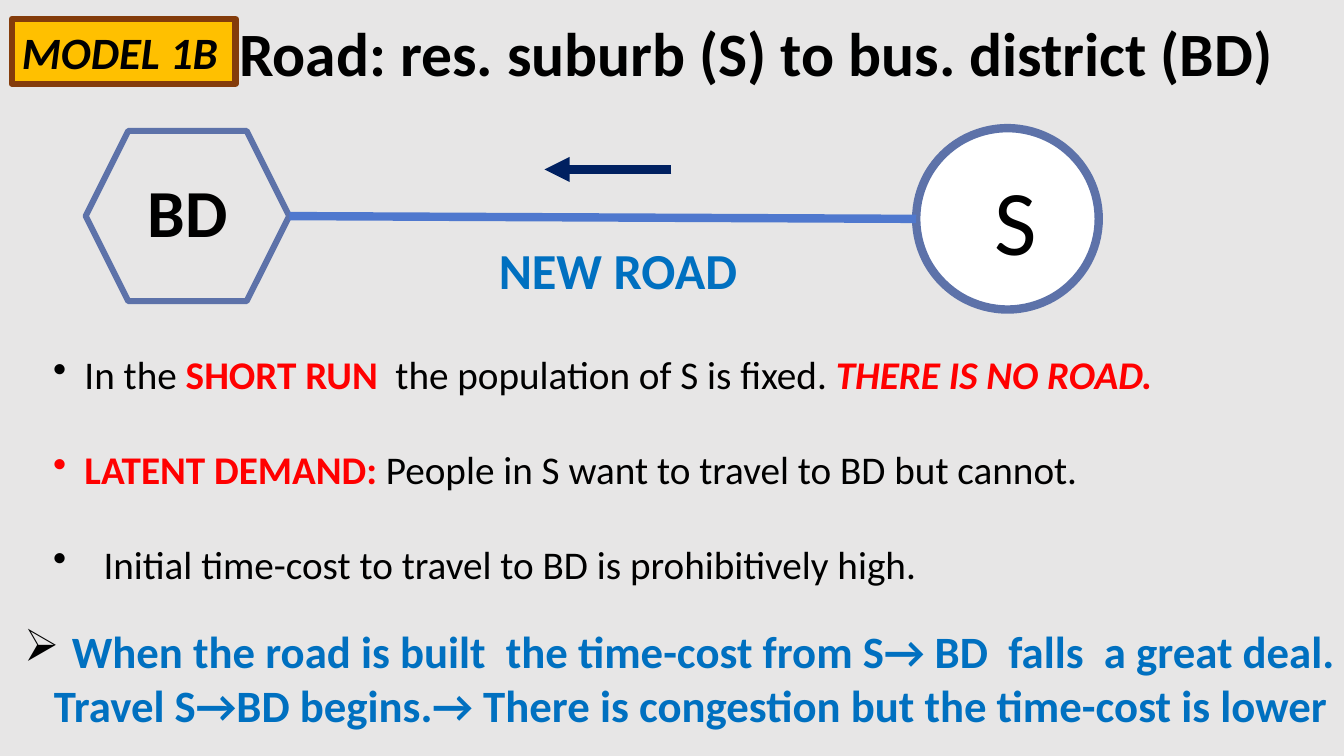
import pptx
import pptx.dml.color
import pptx.enum.shapes
import pptx.enum.text
import pptx.oxml.xmlchemy
import pptx.util

Cm = pptx.util.Cm
Pt = pptx.util.Pt
SHAPES = pptx.enum.shapes.MSO_SHAPE
ALIGN = pptx.enum.text.PP_ALIGN
ANCHOR = pptx.enum.text.MSO_ANCHOR

BLACK, RED, BLUE = "000000", "FF0000", "0070C0"
OUTLINE, ROAD, NAVY = "5D72A9", "4F78CE", "002060"

TITLE = "Road: res. suburb (S) to bus. district (BD)"
MODEL = "MODEL 1B"
ROAD_LABEL = "NEW ROAD"
POINTS = [
    (0.79, "•", [("In the ", {}), ("SHORT RUN  ", {"color": RED, "bold": True}),
                 ("the population of S is fixed. ", {}),
                 ("THERE IS NO ROAD.", {"color": RED, "bold": True, "italic": True})]),
    (0.79, "•", [("LATENT DEMAND: ", {"color": RED, "bold": True}),
                 ("People in S want to travel to BD but cannot.", {})]),
    (1.27, "•", [("Initial time-cost to travel to BD is prohibitively high.", {})]),
]
BUILT = {"color": BLUE, "bold": True}
OUTCOME = [
    (1.2, "➢", [("When the road is built  the time-cost from S→ BD  falls  a great deal.", BUILT)]),
    (0.75, None, [("Travel S→BD begins.→ There is congestion but the time-cost is lower", BUILT)]),
]

DISTRICT_BOX = (2.16, 3.3, 5.13, 4.29)
SUBURB_BOX = (23.09, 3.23, 4.6, 4.57)
MODEL_BOX = (0.3, 0.48, 5.64, 1.63)

deck = pptx.Presentation()
deck.slide_width, deck.slide_height = Cm(33.87), Cm(19.05)
slide = deck.slides.add_slide(deck.slide_layouts[6])


def rgb(value):
    return pptx.dml.color.RGBColor.from_string(value)


def element(tag, **attributes):
    node = pptx.oxml.xmlchemy.OxmlElement(tag)
    for key, value in attributes.items():
        node.set(key, value)
    return node


def add_run(paragraph, text, size, color=BLACK, bold=False, italic=False):
    run = paragraph.add_run()
    run.text = text
    run.font.name, run.font.size = "Calibri", Pt(size)
    run.font.bold, run.font.italic = bold, italic
    run.font.color.rgb = rgb(color)


def write(shape, text, size, align=ALIGN.LEFT, anchor=ANCHOR.MIDDLE, wrap=False, **style):
    frame = shape.text_frame
    frame.word_wrap, frame.vertical_anchor = wrap, anchor
    frame.paragraphs[0].alignment = align
    add_run(frame.paragraphs[0], text, size, **style)


def add_textbox(box):
    return slide.shapes.add_textbox(*map(Cm, box))


def add_outlined(kind, box, line, width, fill=None):
    shape = slide.shapes.add_shape(kind, *map(Cm, box))
    shape.shadow.inherit = False
    if fill:
        shape.fill.solid()
        shape.fill.fore_color.rgb = rgb(fill)
    else:
        shape.fill.background()
    shape.line.color.rgb, shape.line.width = rgb(line), Pt(width)
    return shape


def add_line(start, end, color):
    line = slide.shapes.add_connector(
        pptx.enum.shapes.MSO_CONNECTOR.STRAIGHT, *map(Cm, start + end))
    line.line.color.rgb, line.line.width = rgb(color), Pt(6)
    line._element.spPr.append(element("a:effectLst"))
    return line


def add_list(box, items, size, gap=0):
    frame = add_textbox(box).text_frame
    frame.word_wrap = True
    for index, (indent, bullet, runs) in enumerate(items):
        paragraph = frame.add_paragraph() if index else frame.paragraphs[0]
        paragraph.space_after = Pt(gap)
        properties = paragraph._p.get_or_add_pPr()
        properties.set("marL", str(int(Cm(indent))))
        if bullet:
            properties.set("indent", str(-int(Cm(indent))))
            bullet_color = BLACK if bullet == "➢" else runs[0][1].get("color", BLACK)
            mark_color = element("a:buClr")
            mark_color.append(element("a:srgbClr", val=bullet_color))
            properties.extend([mark_color, element("a:buChar", char=bullet)])
        for text, style in runs:
            add_run(paragraph, text, size, **style)


def build():
    """Draw the road model slide and save it."""
    slide.background.fill.solid()
    slide.background.fill.fore_color.rgb = rgb("E7E6E6")

    write(add_textbox((5.78, 0.3, 27.5, 2)), TITLE, 44, wrap=True, bold=True)

    suburb = add_outlined(SHAPES.OVAL, SUBURB_BOX, OUTLINE, 6, fill="FFFFFF")
    write(suburb, "S", 66, align=ALIGN.CENTER)
    suburb.text_frame.margin_left = Cm(0.65)

    district = add_outlined(SHAPES.HEXAGON, DISTRICT_BOX, OUTLINE, 4.33)
    write(district, "BD", 48, align=ALIGN.CENTER, bold=True)
    district.text_frame.margin_bottom = Cm(0.38)

    model = add_outlined(SHAPES.RECTANGLE, MODEL_BOX, "843C0B", 4.5, fill="FFC000")
    write(model, MODEL, 32, wrap=True, bold=True, italic=True)

    left, top, width, height = DISTRICT_BOX
    road_start = (left + width, top + height / 2)
    road_end = (SUBURB_BOX[0], SUBURB_BOX[1] + SUBURB_BOX[3] / 2)
    add_line(road_start, road_end, ROAD)

    travel = add_line((16.92, 4.27), (13.72, 4.27), NAVY)
    travel.line._get_or_add_ln().append(element("a:tailEnd", type="triangle"))

    write(add_textbox((12.32, 5.89, 6.58, 1.8)), ROAD_LABEL, 36,
          anchor=ANCHOR.TOP, wrap=True, color=BLUE, bold=True)
    add_list((1.09, 8.71, 30, 6.25), POINTS, 28, gap=34)
    add_list((0.36, 15.6, 34.54, 3), OUTCOME, 32)
    deck.save("out.pptx")


if __name__ == "__main__":
    build()
